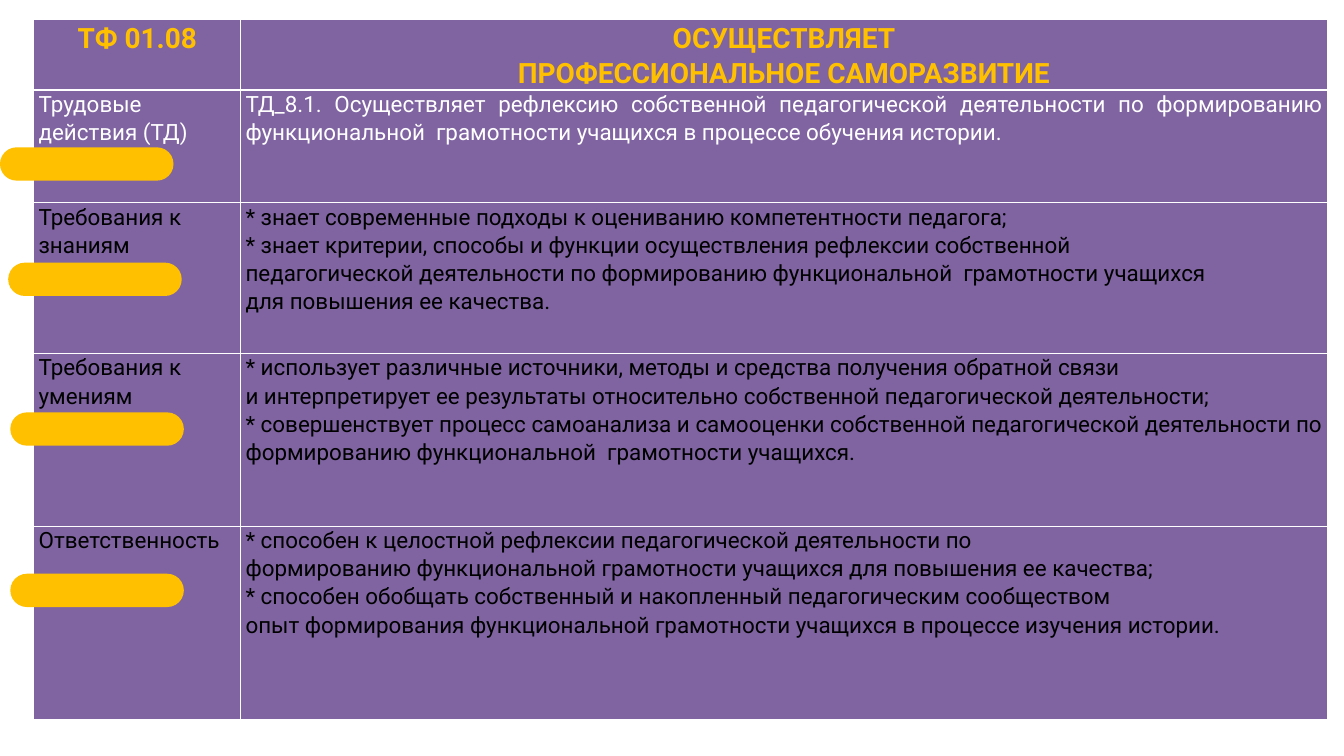
from dataclasses import dataclass
from typing import Any

from lxml import etree
from pptx import Presentation
from pptx import util as u
from pptx.dml import color
from pptx.enum import shapes, text
from pptx.oxml import ns

PURPLE, GOLD, WHITE, BLACK = "8064A2", "FFC000", "FFFFFF", "000000"
LEFT, CENTER, JUSTIFY = (text.PP_ALIGN.LEFT, text.PP_ALIGN.CENTER,
                         text.PP_ALIGN.JUSTIFY)
HEADER = dict(size=u.Pt(30), bold=True)
BODY = dict(size=u.Pt(24), bold=False)
COLUMNS = [7.82, 41.07]
ROWS = [
    (2.63, GOLD, ["ТФ 01.08"],
     ["ОСУЩЕСТВЛЯЕТ", "ПРОФЕССИОНАЛЬНОЕ САМОРАЗВИТИЕ"]),
    (4.25, WHITE, ["Трудовые действия (ТД)"],
     ["ТД_8.1. Осуществляет рефлексию собственной педагогической деятельности по "
      "формированию функциональной  грамотности учащихся в процессе обучения истории."]),
    (5.7, BLACK, ["Требования к знаниям"],
     ["* знает современные подходы к оцениванию компетентности педагога;",
      "* знает критерии, способы и функции осуществления рефлексии собственной",
      "педагогической деятельности по формированию функциональной  грамотности учащихся",
      "для повышения ее качества."]),
    (6.53, BLACK, ["Требования к умениям"],
     ["* использует различные источники, методы и средства получения обратной связи",
      "и интерпретирует ее результаты относительно собственной педагогической деятельности;",
      "* совершенствует процесс самоанализа и самооценки собственной педагогической "
      "деятельности по формированию функциональной  грамотности учащихся."]),
    (7.33, BLACK, ["Ответственность"],
     ["* способен к целостной рефлексии педагогической деятельности по",
      "формированию функциональной грамотности учащихся для повышения ее качества;",
      "* способен обобщать собственный и накопленный педагогическим сообществом",
      "опыт формирования функциональной грамотности учащихся в процессе изучения истории."]),
]
PILLS = [(0, 5.57), (0.31, 9.93), (0.39, 15.59), (0.39, 21.69)]


def rgb(value):
    return color.RGBColor.from_string(value)


def assign(target, values):
    for name, value in values.items():
        setattr(target, name, value)


@dataclass
class Painter:
    """Draws styled elements on the current slide."""
    page: Any
    font: str = "Roboto"

    def border(self, cell, side, width):
        line = etree.SubElement(cell._tc.get_or_add_tcPr(), ns.qn(f"a:ln{side}"),
                                w=str(u.Pt(width)))
        fill = etree.SubElement(line, ns.qn("a:solidFill"))
        etree.SubElement(fill, ns.qn("a:srgbClr"), val=WHITE)

    def paragraphs(self, frame, lines, align, ink, style):
        for index, line in enumerate(lines):
            para = frame.add_paragraph() if index else frame.paragraphs[0]
            assign(para, dict(alignment=align, line_spacing=1.07))
            span = para.add_run()
            span.text = line
            assign(span.font, dict(style, name=self.font))
            span.font.color.rgb = rgb(ink)

    def cell(self, cell, lines, align, ink, style, top, bottom):
        assign(cell, dict(margin_left=u.Cm(0.18), margin_right=u.Cm(0.18),
                          margin_top=0, margin_bottom=0))
        for side, width in dict(L=1, R=1, T=top, B=bottom).items():
            self.border(cell, side, width)
        cell.fill.solid()
        cell.fill.fore_color.rgb = rgb(PURPLE)
        self.paragraphs(cell.text_frame, lines, align, ink, style)

    def table(self, left, top, columns, rows):
        height = sum(row[0] for row in rows)
        grid = self.page.shapes.add_table(
            len(rows), len(columns), u.Cm(left), u.Cm(top),
            u.Cm(sum(columns)), u.Cm(height)).table
        for column, width in zip(grid.columns, columns):
            column.width = u.Cm(width)
        for index, (height, ink, *cells) in enumerate(rows):
            grid.rows[index].height = u.Cm(height)
            style = BODY if index else HEADER
            aligns = (LEFT, JUSTIFY) if index else (CENTER, CENTER)
            top_line, bottom_line = 3 if index == 1 else 1, 1 if index else 3
            for number, (lines, align) in enumerate(zip(cells, aligns)):
                self.cell(grid.cell(index, number), lines, align, ink, style,
                          top_line, bottom_line)

    def pill(self, left, top, width=6.56, height=1.26):
        box = self.page.shapes.add_shape(
            shapes.MSO_SHAPE.ROUNDED_RECTANGLE,
            *(u.Cm(value) for value in (left, top, width, height)))
        box.adjustments[0] = 0.5
        box.shadow.inherit = False
        box.fill.solid()
        box.fill.fore_color.rgb = rgb(GOLD)
        box.line.fill.background()


def main():
    deck = Presentation()
    assign(deck, dict(slide_width=u.Cm(50.8), slide_height=u.Cm(28.58)))
    painter = Painter(deck.slides.add_slide(deck.slide_layouts[6]))
    painter.table(1.28, 0.75, COLUMNS, ROWS)
    for left, top in PILLS:
        painter.pill(left, top)
    deck.save("out.pptx")


if __name__ == "__main__":
    main()
